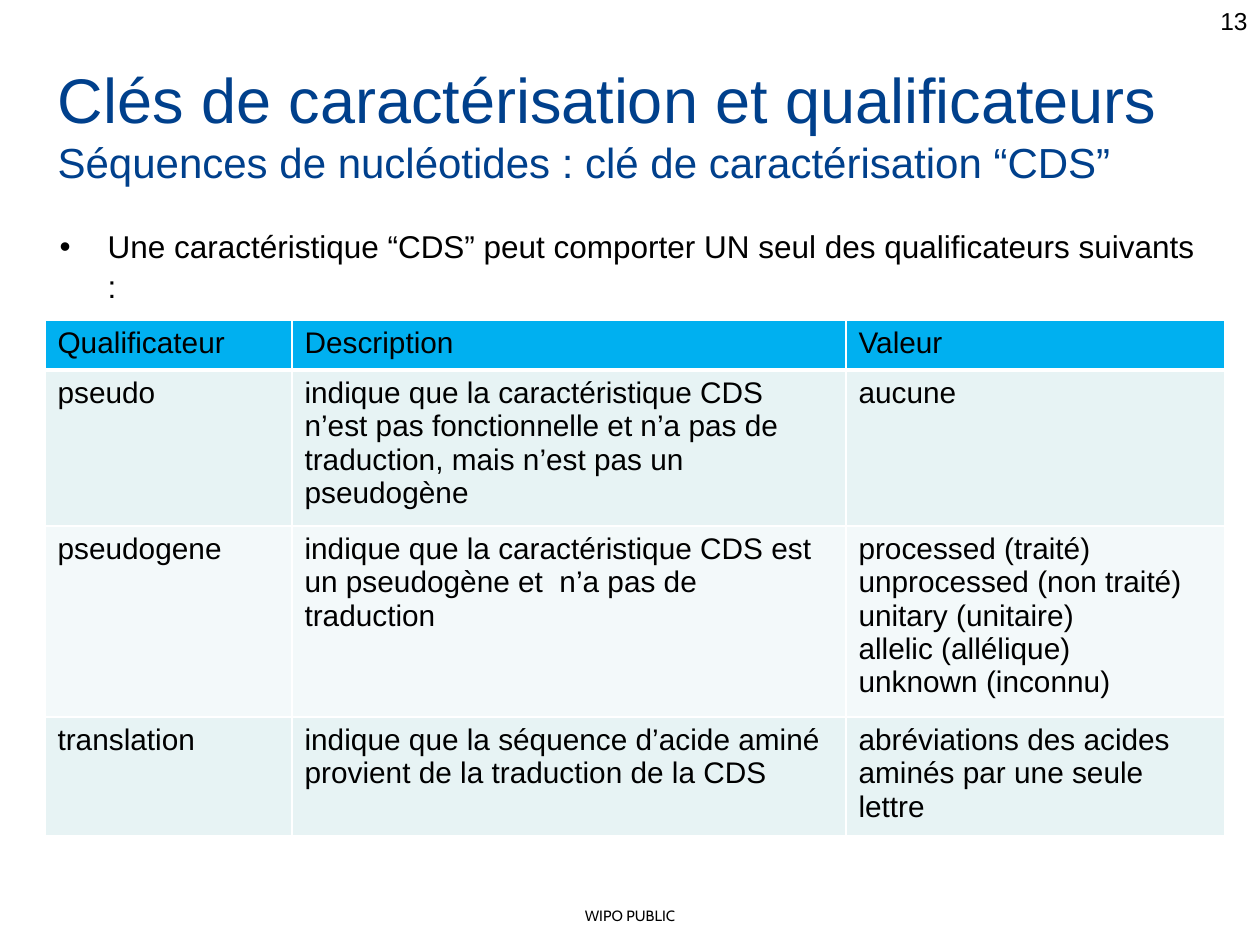
from dataclasses import dataclass

from lxml import etree
from pptx import Presentation
from pptx.dml.color import RGBColor
from pptx.enum.text import MSO_ANCHOR, MSO_AUTO_SIZE, PP_ALIGN
from pptx.oxml.ns import qn
from pptx.util import Emu, Pt

PIXELS_PER_INCH = 126
WHITE = RGBColor(0xFF, 0xFF, 0xFF)
BLACK = RGBColor(0x00, 0x00, 0x00)
NAVY = RGBColor(0x00, 0x40, 0x8C)
SKY_BLUE = RGBColor(0x00, 0xB0, 0xF0)
PALE_TEAL = RGBColor(0xE7, 0xF3, 0xF4)
PALER_TEAL = RGBColor(0xF3, 0xF9, 0xFA)
COLUMN_WIDTHS = (247, 554, 379)


@dataclass(frozen=True)
class Box:
    left: int
    top: int
    width: int
    height: int


@dataclass(frozen=True)
class QualifierRow:
    height: int
    fill: RGBColor
    qualifier: str
    description: str
    values: tuple[str, ...]


ROWS = (
    QualifierRow(50, SKY_BLUE, "Qualificateur", "Description", ("Valeur",)),
    QualifierRow(
        156, PALE_TEAL, "pseudo",
        "indique que la caractéristique CDS n’est pas fonctionnelle et n’a pas de "
        "traduction, mais n’est pas un pseudogène",
        ("aucune",),
    ),
    QualifierRow(
        191, PALER_TEAL, "pseudogene",
        "indique que la caractéristique CDS est un pseudogène et  n’a pas de traduction",
        ("processed (traité)", "unprocessed (non traité)", "unitary (unitaire)",
         "allelic (allélique)", "unknown (inconnu)"),
    ),
    QualifierRow(
        119, PALE_TEAL, "translation",
        "indique que la séquence d’acide aminé provient de la traduction de la CDS",
        ("abréviations des acides aminés par une seule lettre",),
    ),
)


def px(length: int) -> Emu:
    return Emu(round(length * 914400 / PIXELS_PER_INCH))


def place(shape, box: Box) -> None:
    shape.left, shape.top = px(box.left), px(box.top)
    shape.width, shape.height = px(box.width), px(box.height)


def add_bullet(paragraph, indent: int) -> None:
    properties = paragraph._p.get_or_add_pPr()
    properties.set("marL", str(px(indent)))
    properties.set("indent", str(-px(indent)))
    etree.SubElement(properties, qn("a:buFont"), typeface="Arial")
    etree.SubElement(properties, qn("a:buChar"), char="•")


def write_text(text_frame, lines, *, sizes, color=BLACK, font="Arial",
               align=PP_ALIGN.LEFT, anchor=MSO_ANCHOR.TOP,
               bullet_indent=0, line_spacing=1.0) -> None:
    """Write one paragraph per line; sizes gives the point size of each."""
    text_frame.word_wrap = True
    text_frame.vertical_anchor = anchor
    for index, (line, size) in enumerate(zip(lines, sizes)):
        paragraph = text_frame.add_paragraph() if index else text_frame.paragraphs[0]
        paragraph.alignment = align
        paragraph.space_before = Pt(0)
        paragraph.line_spacing = line_spacing
        if bullet_indent:
            add_bullet(paragraph, bullet_indent)
        run = paragraph.add_run()
        run.text = line
        run.font.name = font
        run.font.size = Pt(size)
        run.font.color.rgb = color


def fill_placeholder(shape, box: Box, lines, **text_format) -> None:
    place(shape, box)
    shape.text_frame.auto_size = MSO_AUTO_SIZE.NONE
    write_text(shape.text_frame, lines, **text_format)


def add_label(slide, box: Box, text: str, size: float, **text_format) -> None:
    shape = slide.shapes.add_textbox(0, 0, 0, 0)
    place(shape, box)
    write_text(shape.text_frame, [text], sizes=[size], **text_format)


def set_borders(cell, bottom_width: float) -> None:
    properties = cell._tc.get_or_add_tcPr()
    widths = {"a:lnL": 1, "a:lnR": 1, "a:lnT": 1, "a:lnB": bottom_width}
    for position, (tag, width) in enumerate(widths.items()):
        line = etree.Element(qn(tag), w=str(Pt(width)))
        solid_fill = etree.SubElement(line, qn("a:solidFill"))
        etree.SubElement(solid_fill, qn("a:srgbClr"), val=str(WHITE))
        properties.insert(position, line)


def add_qualifier_table(slide, left: int, top: int) -> None:
    table = slide.shapes.add_table(
        len(ROWS), len(COLUMN_WIDTHS), px(left), px(top),
        px(sum(COLUMN_WIDTHS)), px(sum(row.height for row in ROWS)),
    ).table
    for column, width in zip(table.columns, COLUMN_WIDTHS):
        column.width = px(width)
    for row_index, row in enumerate(ROWS):
        table.rows[row_index].height = px(row.height)
        contents = ((row.qualifier,), (row.description,), row.values)
        for cell, lines in zip(table.rows[row_index].cells, contents):
            cell.fill.solid()
            cell.fill.fore_color.rgb = row.fill
            set_borders(cell, bottom_width=1 if row_index else 3)
            write_text(cell.text_frame, lines, sizes=[17] * len(lines))


def main() -> None:
    presentation = Presentation()
    presentation.slide_width, presentation.slide_height = px(1260), px(945)
    slide = presentation.slides.add_slide(presentation.slide_layouts[1])
    fill_placeholder(
        slide.shapes.title, Box(45, 45, 1134, 158),
        ["Clés de caractérisation et qualificateurs",
         "Séquences de nucléotides : clé de caractérisation “CDS”"],
        sizes=[36, 24], color=NAVY, anchor=MSO_ANCHOR.MIDDLE,
    )
    fill_placeholder(
        slide.placeholders[1], Box(47, 219, 1163, 713),
        ["Une caractéristique “CDS” peut comporter UN seul des qualificateurs suivants :"],
        sizes=[18], bullet_indent=48, line_spacing=1.05,
    )
    add_qualifier_table(slide, left=45, top=320)
    add_label(slide, Box(966, 0, 294, 66), "13", 14, align=PP_ALIGN.RIGHT)
    add_label(slide, Box(0, 901, 1260, 30), "WIPO PUBLIC", 8.5, font="Cabin",
              align=PP_ALIGN.CENTER, anchor=MSO_ANCHOR.MIDDLE)
    presentation.save("out.pptx")


if __name__ == "__main__":
    main()
